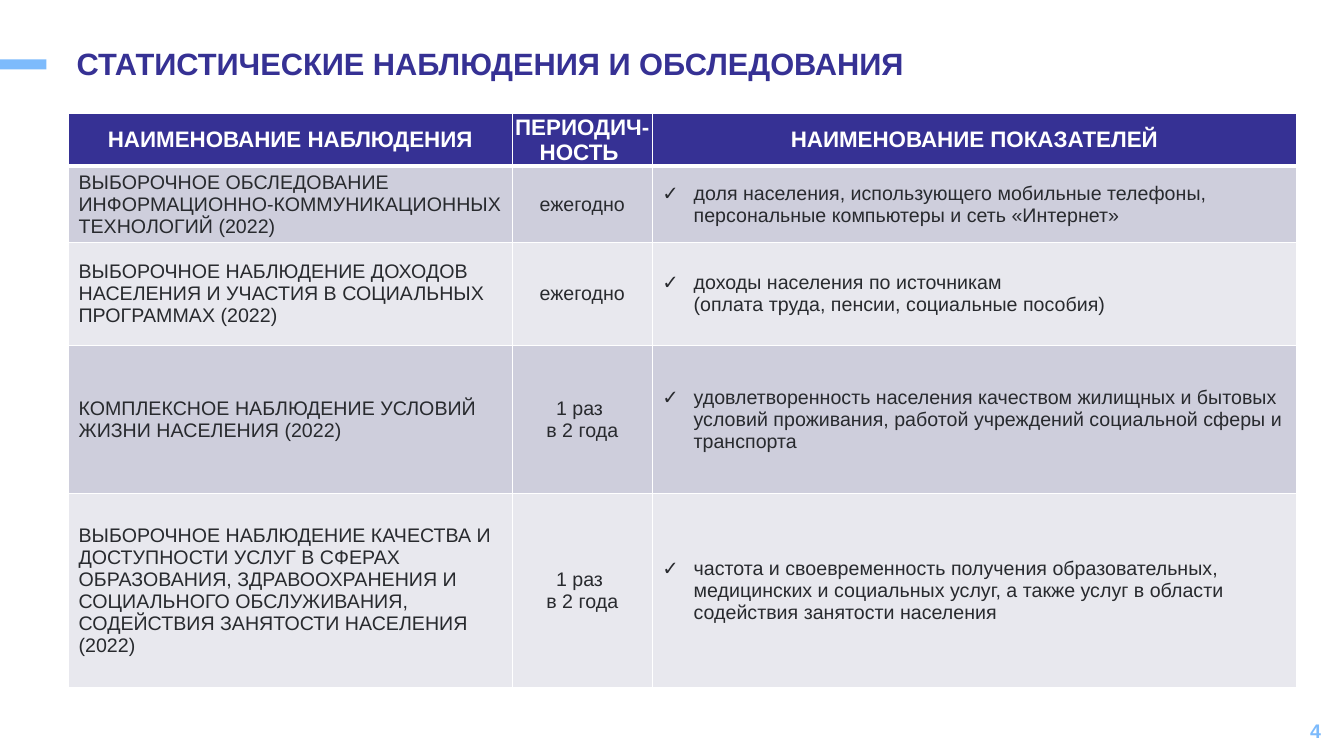
from lxml import etree
from pptx import Presentation
from pptx.dml.color import RGBColor
from pptx.enum import shapes, text
from pptx.oxml import ns
from pptx.util import Pt

PX = 9144  # 100 px to the inch
THEME = {
    "font": "Arial", "navy": "363194", "sky": "7DBBFC", "white": "FFFFFF",
    "ink": "282A2E", "bands": ("CECEDC", "E8E8EE"),
    "title": 22, "head": 16, "body": 14,
}
MID = text.MSO_ANCHOR.MIDDLE
LEFT, CENTER, RIGHT = text.PP_ALIGN.LEFT, text.PP_ALIGN.CENTER, text.PP_ALIGN.RIGHT


def write(frame, words, size, color, bold, align):
    """Fill the first paragraph and format its runs."""
    para = frame.paragraphs[0]
    para.text = words
    para.alignment = align
    for run in para.runs:
        run.font.name = THEME["font"]
        run.font.size = Pt(size)
        run.font.bold = bold
        run.font.color.rgb = RGBColor.from_string(color)
    return para


def edge(cell, side, width):
    """Add a white border to one side of a cell."""
    line = etree.SubElement(cell._tc.get_or_add_tcPr(), ns.qn("a:ln" + side), w=str(Pt(width)))
    fill = etree.SubElement(line, ns.qn("a:solidFill"))
    etree.SubElement(fill, ns.qn("a:srgbClr"), val=THEME["white"])


deck = Presentation()
deck.slide_width, deck.slide_height = 1333 * PX, 750 * PX
slide = deck.slides.add_slide(deck.slide_layouts[5])

# Accent bar and title
bar = slide.shapes.add_shape(shapes.MSO_SHAPE.RECTANGLE, 0, 59 * PX, 46 * PX, 10 * PX)
bar.shadow.inherit = False
bar.fill.solid()
bar.fill.fore_color.rgb = RGBColor.from_string(THEME["sky"])
bar.line.fill.background()

title = slide.shapes.title
title.left, title.top, title.width, title.height = 66 * PX, 43 * PX, 1041 * PX, 44 * PX
title.text_frame.vertical_anchor = MID
para = write(title.text_frame, "СТАТИСТИЧЕСКИЕ НАБЛЮДЕНИЯ И ОБСЛЕДОВАНИЯ",
             THEME["title"], THEME["navy"], True, LEFT)
para.line_spacing = 0.9

# Table of surveys
ROWS = [
    ("НАИМЕНОВАНИЕ НАБЛЮДЕНИЯ", "ПЕРИОДИЧ-НОСТЬ ", "НАИМЕНОВАНИЕ ПОКАЗАТЕЛЕЙ"),
    ("ВЫБОРОЧНОЕ ОБСЛЕДОВАНИЕ ИНФОРМАЦИОННО-КОММУНИКАЦИОННЫХ ТЕХНОЛОГИЙ (2022)",
     "ежегодно",
     "доля населения, использующего мобильные телефоны, персональные компьютеры "
     "и сеть «Интернет»"),
    ("ВЫБОРОЧНОЕ НАБЛЮДЕНИЕ ДОХОДОВ НАСЕЛЕНИЯ И УЧАСТИЯ В СОЦИАЛЬНЫХ ПРОГРАММАХ (2022)",
     "ежегодно",
     "доходы населения по источникам \n(оплата труда, пенсии, социальные пособия)"),
    ("КОМПЛЕКСНОЕ НАБЛЮДЕНИЕ УСЛОВИЙ ЖИЗНИ НАСЕЛЕНИЯ (2022)",
     "1 раз \nв 2 года",
     "удовлетворенность населения качеством жилищных и бытовых условий проживания, "
     "работой учреждений социальной сферы и транспорта"),
    ("ВЫБОРОЧНОЕ НАБЛЮДЕНИЕ КАЧЕСТВА И ДОСТУПНОСТИ УСЛУГ В СФЕРАХ ОБРАЗОВАНИЯ, "
     "ЗДРАВООХРАНЕНИЯ И СОЦИАЛЬНОГО ОБСЛУЖИВАНИЯ, СОДЕЙСТВИЯ ЗАНЯТОСТИ НАСЕЛЕНИЯ (2022)",
     "1 раз \nв 2 года",
     "частота и своевременность получения образовательных, медицинских и социальных услуг, "
     "а также услуг в области содействия занятости населения"),
]
WIDTHS = (440, 139, 639)
HEIGHTS = (52, 74, 102, 147, 193)
INDENT = 31 * PX

table = slide.shapes.add_table(len(ROWS), len(WIDTHS), 68 * PX, 113 * PX,
                               sum(WIDTHS) * PX, sum(HEIGHTS) * PX).table
table.horz_banding = False
for col, width in zip(table.columns, WIDTHS):
    col.width = width * PX

for r, (words, height) in enumerate(zip(ROWS, HEIGHTS)):
    table.rows[r].height = height * PX
    head = r == 0
    size = THEME["head" if head else "body"]
    color = THEME["white" if head else "ink"]
    back = THEME["navy"] if head else THEME["bands"][(r - 1) % 2]
    for c, label in enumerate(words):
        cell = table.cell(r, c)
        cell.vertical_anchor = MID
        if head and c == 1:
            cell.margin_left = cell.margin_right = cell.margin_top = cell.margin_bottom = 0
        for side in "LRTB":
            thick = (r == 0 and side == "B") or (r == 1 and side == "T")
            edge(cell, side, 3 if thick else 1)
        cell.fill.solid()
        cell.fill.fore_color.rgb = RGBColor.from_string(back)
        para = write(cell.text_frame, label, size, color, head,
                     CENTER if head or c == 1 else LEFT)
        if c == 2 and not head:
            prop = para._p.get_or_add_pPr()
            prop.set("marL", str(INDENT))
            prop.set("indent", str(-INDENT))
            etree.SubElement(prop, ns.qn("a:buFont"), typeface=THEME["font"])
            etree.SubElement(prop, ns.qn("a:buChar"), char="✓")

# Page number
page = slide.shapes.add_textbox(1020 * PX, 705 * PX, 300 * PX, 40 * PX).text_frame
page.word_wrap = True
page.vertical_anchor = MID
write(page, "4", THEME["body"], THEME["sky"], True, RIGHT)

deck.save("out.pptx")
